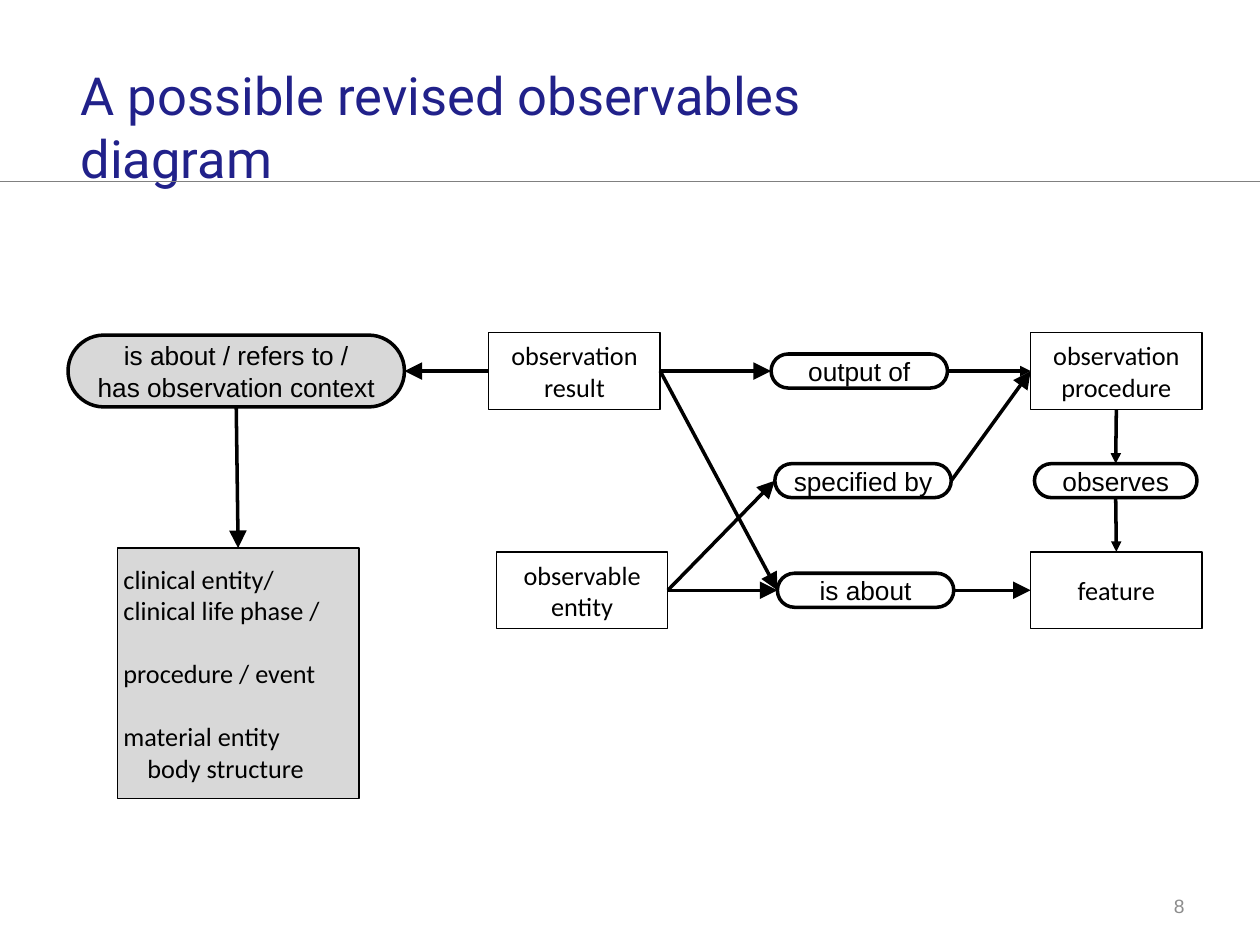
from lxml import etree
from pptx import Presentation
from pptx.dml.color import RGBColor
from pptx.enum.shapes import MSO_CONNECTOR, MSO_SHAPE
from pptx.enum.text import MSO_ANCHOR, MSO_AUTO_SIZE, PP_ALIGN
from pptx.oxml.ns import qn
from pptx.util import Emu, Pt

RECT, PILL = MSO_SHAPE.RECTANGLE, MSO_SHAPE.ROUNDED_RECTANGLE
STRAIGHT = MSO_CONNECTOR.STRAIGHT
MIDDLE, NO_FIT = MSO_ANCHOR.MIDDLE, MSO_AUTO_SIZE.NONE
LEFT, CENTER, RIGHT = PP_ALIGN.LEFT, PP_ALIGN.CENTER, PP_ALIGN.RIGHT
TOP_SIDE, LEFT_SIDE, BOTTOM_SIDE, RIGHT_SIDE = range(4)
BLACK, GREY, NAVY = "000000", "808080", "21218A"
BOX_W, BOX_H = 136, 61
PILL_W, PILL_H = 140, 27


def px(n):
    """Length in EMU at 100 px to the inch."""
    return Emu(n * 9144)


def rgb(color):
    return RGBColor.from_string(color)


def add_run(p, text, size, font, color):
    r = p.add_run()
    r.text = text
    r.font.size = Pt(size)
    r.font.name = font
    r.font.color.rgb = rgb(color)


def set_frame(tf, inset_x, inset_y, wrap=True):
    tf.auto_size = NO_FIT
    tf.word_wrap = wrap
    tf.vertical_anchor = MIDDLE
    tf.margin_left = tf.margin_right = px(inset_x)
    tf.margin_top = tf.margin_bottom = px(inset_y)


def add_lines(tf, lines, font, align):
    for i, line in enumerate(lines):
        p = tf.add_paragraph() if i else tf.paragraphs[0]
        p.alignment = align
        add_run(p, line, 15, font, BLACK)


def add_node(s, kind, x, y, w, h, line_width, shaded):
    sp = s.shapes.add_shape(kind, px(x), px(y), px(w), px(h))
    sp.shadow.inherit = False
    sp.line.color.rgb = rgb(BLACK)
    sp.line.width = Pt(line_width)
    if shaded:
        sp.fill.solid()
        sp.fill.fore_color.rgb = rgb(GREY)
        color = sp.fill._xPr.find(qn("a:solidFill"))[0]
        etree.SubElement(color, qn("a:alpha"), val="30000")
    else:
        sp.fill.background()
    return sp


def add_box(s, x, y, lines, w=BOX_W, h=BOX_H, align=CENTER, shaded=False):
    """Square-cornered box for an entity."""
    sp = add_node(s, RECT, x, y, w, h, 0.75, shaded)
    set_frame(sp.text_frame, 5, 3)
    add_lines(sp.text_frame, lines, "Calibri", align)
    return sp


def add_pill(s, x, y, lines, w=PILL_W, h=PILL_H, shaded=False):
    """Round-ended box for a relation."""
    sp = add_node(s, PILL, x, y, w, h, 2, shaded)
    sp.adjustments[0] = 0.5
    set_frame(sp.text_frame, 10, 5, wrap=False)
    add_lines(sp.text_frame, lines, "Arial", CENTER)
    return sp


def add_line(s, x1, y1, x2, y2, color, width):
    c = s.shapes.add_connector(STRAIGHT, px(x1), px(y1), px(x2), px(y2))
    c.line.color.rgb = rgb(color)
    c.line.width = Pt(width)
    etree.SubElement(c._element.spPr, qn("a:effectLst"))
    return c


def add_arrow(s, start, start_side, end, end_side, head="lg"):
    c = add_line(s, 0, 0, 0, 0, BLACK, 2)
    c.begin_connect(start, start_side)
    c.end_connect(end, end_side)
    etree.SubElement(c.line._get_or_add_ln(), qn("a:tailEnd"),
                     type="triangle", w=head, len=head)


def add_title(s, x, y, w, h):
    title = s.shapes.title
    title.left, title.top, title.width, title.height = map(px, (x, y, w, h))
    set_frame(title.text_frame, 10, 10)
    p = title.text_frame.paragraphs[0]
    p.alignment = LEFT
    add_run(p, "A possible revised observables diagram", 30, "Roboto", NAVY)


def add_page_number(s, x, y, w, h):
    tf = s.shapes.add_textbox(px(x), px(y), px(w), px(h)).text_frame
    set_frame(tf, 10, 5)
    p = tf.paragraphs[0]
    p.alignment = RIGHT
    add_run(p, "8", 11, "Arial", "8C8C8C")


def add_context(s, x, y):
    """Shaded column on the left; returns its relation pill."""
    pill = add_pill(s, x, y, ["is about / refers to /", "has observation context"],
                    267, 57, shaded=True)
    box = add_box(s, x + 39, y + 169,
                  ["clinical entity/", "clinical life phase /", "procedure / event",
                   "material entity", "body structure"],
                  192, 199, LEFT, shaded=True)
    paragraphs = box.text_frame.paragraphs
    for p in paragraphs[2:4]:
        p.space_before = Pt(18)
    paragraphs[4]._p.get_or_add_pPr().set("marL", str(px(19)))
    add_arrow(s, pill, BOTTOM_SIDE, box, TOP_SIDE)
    return pill


def add_observables(s, x, y):
    """Entities and relations on the right; returns the result box."""
    lower = y + 174
    result = add_box(s, x, y, ["observation result"])
    entity = add_box(s, x + 6, lower, ["observable entity"])
    procedure = add_box(s, x + 430, y, ["observation procedure"])
    feature = add_box(s, x + 430, lower, ["feature"])
    output_of = add_pill(s, x + 224, y + 17, ["output of"])
    specified_by = add_pill(s, x + 227, y + 104, ["specified by"])
    is_about = add_pill(s, x + 229, y + 191, ["is about"])
    observes = add_pill(s, x + 433, y + 104, ["observes"], 129)

    for start, end, head in [
        (result, output_of, "lg"), (output_of, procedure, "med"),
        (result, is_about, "lg"), (entity, is_about, "lg"),
        (entity, specified_by, "lg"), (specified_by, procedure, "lg"),
        (is_about, feature, "lg"),
    ]:
        add_arrow(s, start, RIGHT_SIDE, end, LEFT_SIDE, head)
    for start, end in [(procedure, observes), (observes, feature)]:
        add_arrow(s, start, BOTTOM_SIDE, end, TOP_SIDE, "med")
    return result


def main():
    prs = Presentation()
    prs.slide_width, prs.slide_height = px(1000), px(750)
    s = prs.slides.add_slide(prs.slide_layouts[5])
    add_line(s, 0, 144, 1000, 144, GREY, 0.75)
    add_title(s, 54, 53, 722, 94)
    context = add_context(s, 54, 266)
    result = add_observables(s, 388, 264)
    add_arrow(s, result, LEFT_SIDE, context, RIGHT_SIDE)
    add_page_number(s, 717, 703, 233, 32)
    prs.save("out.pptx")


if __name__ == "__main__":
    main()
